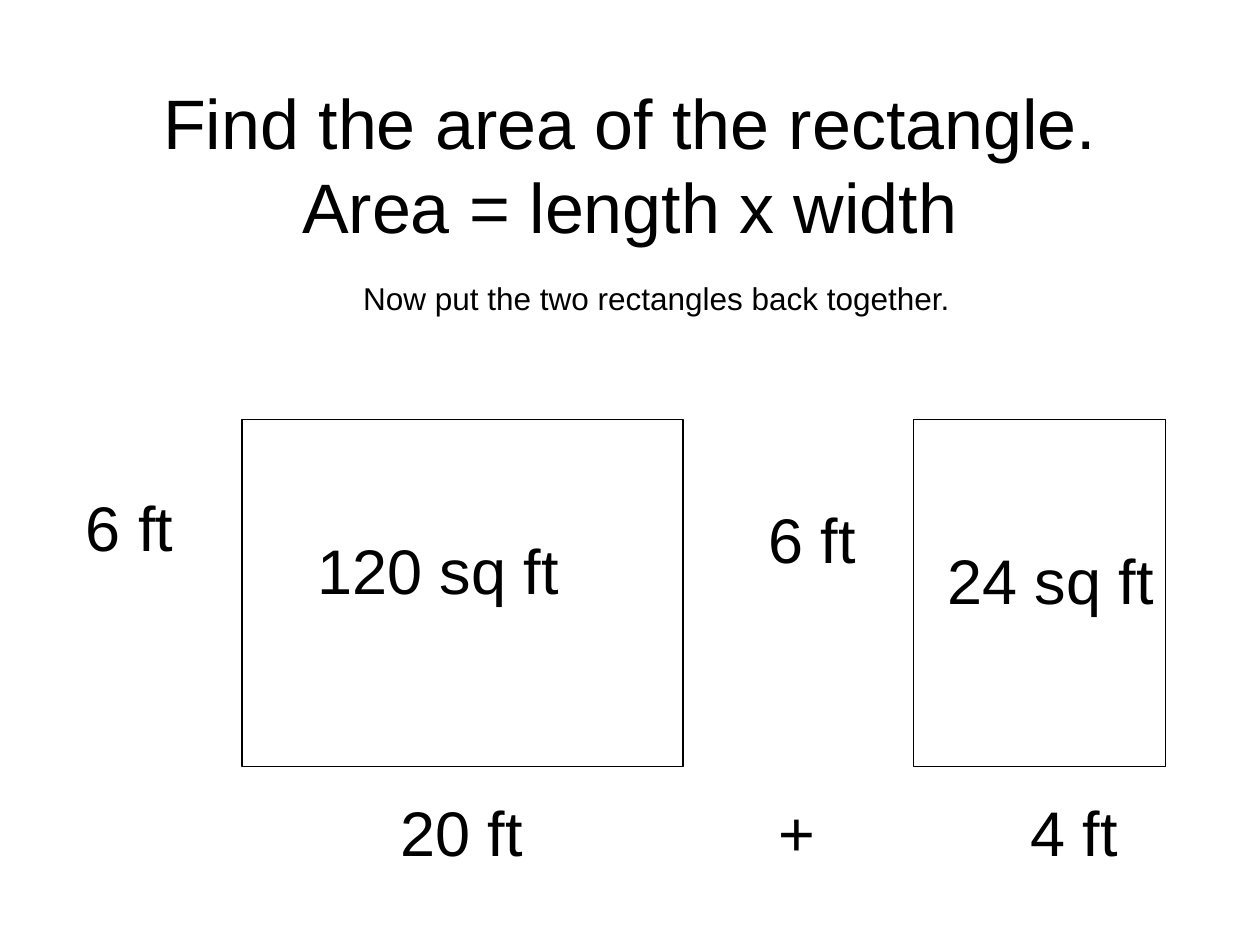
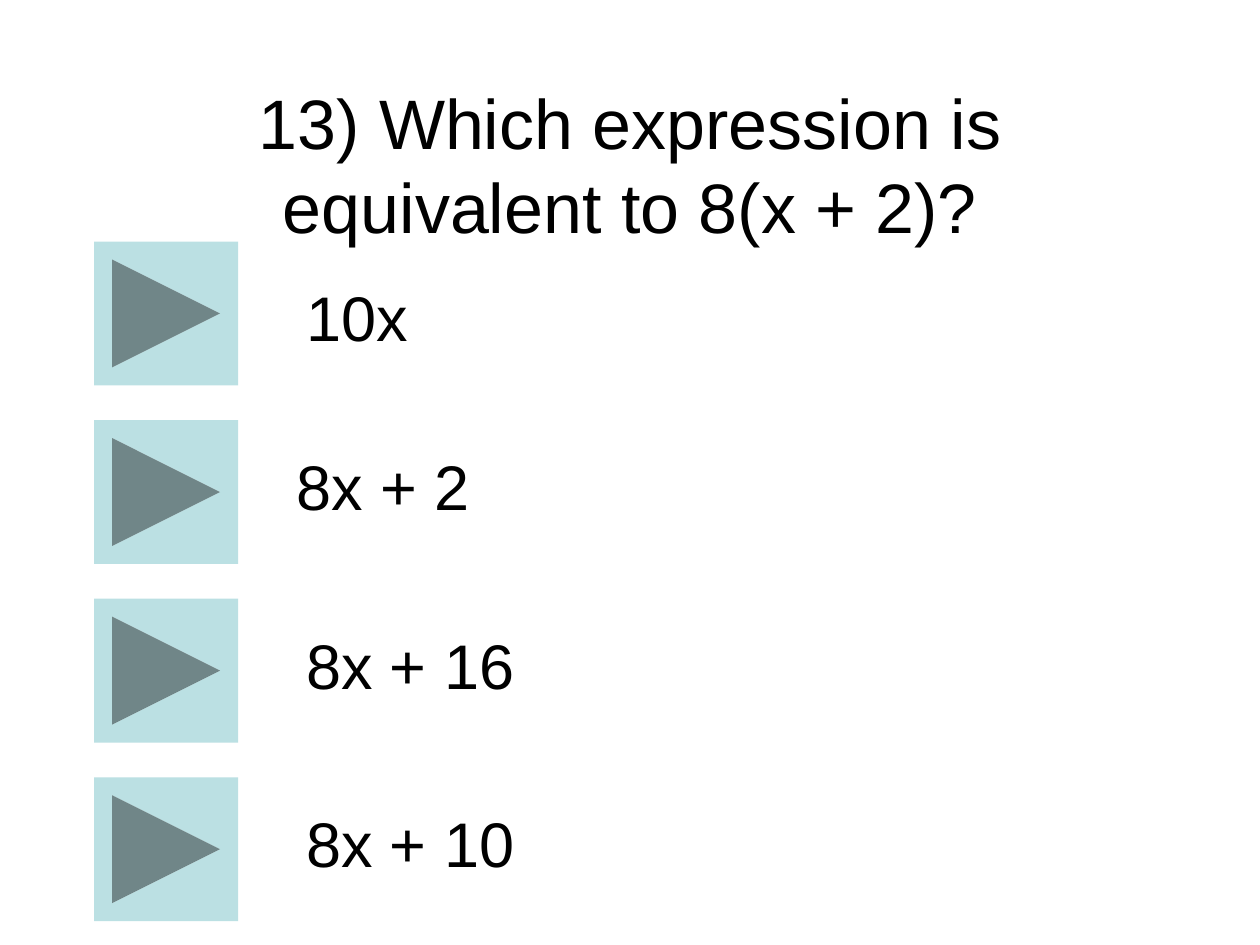
import pptx
import pptx.dml.color
import pptx.enum.shapes
import pptx.enum.text
import pptx.oxml
import pptx.oxml.ns
import pptx.util

Cm = pptx.util.Cm
Pt = pptx.util.Pt
Color = pptx.dml.color.RGBColor
Kind = pptx.enum.shapes.MSO_SHAPE
Align = pptx.enum.text.PP_ALIGN
Anchor = pptx.enum.text.MSO_ANCHOR

BLACK = Color(0, 0, 0)
WHITE = Color(255, 255, 255)
AQUA = Color(0xBB, 0xE0, 0xE3)

AREA_TITLE = "Find the area of the rectangle.\vArea = length x width"
HINT = "Now put the two rectangles back together."
SIDES = "20 ft\t\t\t+ \t\t4 ft"
BOXES = [(18.42, 5.08), (4.88, 8.89)]
LABELS = [
    ("6 ft", 1.48, 9.73, 3.6),
    ("6 ft", 15.24, 9.96, 3.6),
    ("120 sq ft", 6.15, 10.59, 6.99),
    ("24 sq ft", 18.85, 10.8, 6.55),
]
QUIZ_TITLE = "13) Which expression is equivalent to 8(x + 2)?"
CHOICES = [("10x", 5.92, 0.63), ("8x + 2", 5.72, 0.43),
           ("8x + 16", 5.92, 0.43), ("8x + 10", 5.92, 0.43)]

BOX_TOP, BOX_HIGH = 8.46, 6.99
BTN_LEFT, BTN_TOP, BTN_SIZE, BTN_STEP = 1.9, 4.87, 2.9, 3.6
TAB_STEP, TAB_COUNT = 2.54, 5

BODY = {"size": Pt(36)}
SMALL = {"size": Pt(18)}
HEAD = {"size": Pt(40)}
FONT = {"name": "Arial"}


def apply(target, values):
    for name, value in values.items():
        setattr(target, name, value)


def add_text(slide, text, left, top, width, high=1.78, font=BODY,
             align=Align.LEFT, anchor=Anchor.TOP):
    box = slide.shapes.add_textbox(Cm(left), Cm(top), Cm(width), Cm(high))
    frame = box.text_frame
    apply(frame, {"word_wrap": True, "vertical_anchor": anchor, "text": text})
    line = frame.paragraphs[0]
    line.alignment = align
    for run in line.runs:
        apply(run.font, FONT | font)
        run.font.color.rgb = BLACK
    return line


def add_title(slide, text):
    add_text(slide, text, 1.9, 1.7, 21.59, 3.18, HEAD, Align.CENTER, Anchor.MIDDLE)


def add_tabs(line):
    stops = pptx.oxml.parse_xml("<a:tabLst %s/>" % pptx.oxml.ns.nsdecls("a"))
    for index in range(1, TAB_COUNT + 1):
        stop = stops.makeelement(pptx.oxml.ns.qn("a:tab"),
                                 {"pos": str(Cm(index * TAB_STEP)), "algn": "l"})
        stops.append(stop)
    line._p.get_or_add_pPr().append(stops)


def add_block(slide, kind, left, top, width, high, fill, edge=None):
    block = slide.shapes.add_shape(kind, Cm(left), Cm(top), Cm(width), Cm(high))
    block.shadow.inherit = False
    block.fill.solid()
    block.fill.fore_color.rgb = fill
    if edge is None:
        block.line.fill.background()
    else:
        block.line.color.rgb = edge
        block.line.width = Pt(0.75)


def draw_area(slide):
    add_title(slide, AREA_TITLE)
    add_tabs(add_text(slide, SIDES, 7.82, 15.88, 15.88))
    for left, width in BOXES:
        add_block(slide, Kind.RECTANGLE, left, BOX_TOP, width, BOX_HIGH, WHITE, BLACK)
    add_text(slide, HINT, 3.81, 5.5, 18.85, 1.27, SMALL, Align.CENTER)
    for label in LABELS:
        add_text(slide, *label)


def draw_quiz(slide):
    add_title(slide, QUIZ_TITLE)
    for row, (text, left, drop) in enumerate(CHOICES):
        top = BTN_TOP + row * BTN_STEP
        add_block(slide, Kind.ACTION_BUTTON_FORWARD_OR_NEXT,
                  BTN_LEFT, top, BTN_SIZE, BTN_SIZE, AQUA)
        add_text(slide, text, left, top + drop, 10.36)


def main():
    deck = pptx.Presentation()
    apply(deck, {"slide_width": Cm(25.4), "slide_height": Cm(19.05)})
    for draw in (draw_area, draw_quiz):
        draw(deck.slides.add_slide(deck.slide_layouts[6]))
    deck.save("out.pptx")


if __name__ == "__main__":
    main()
